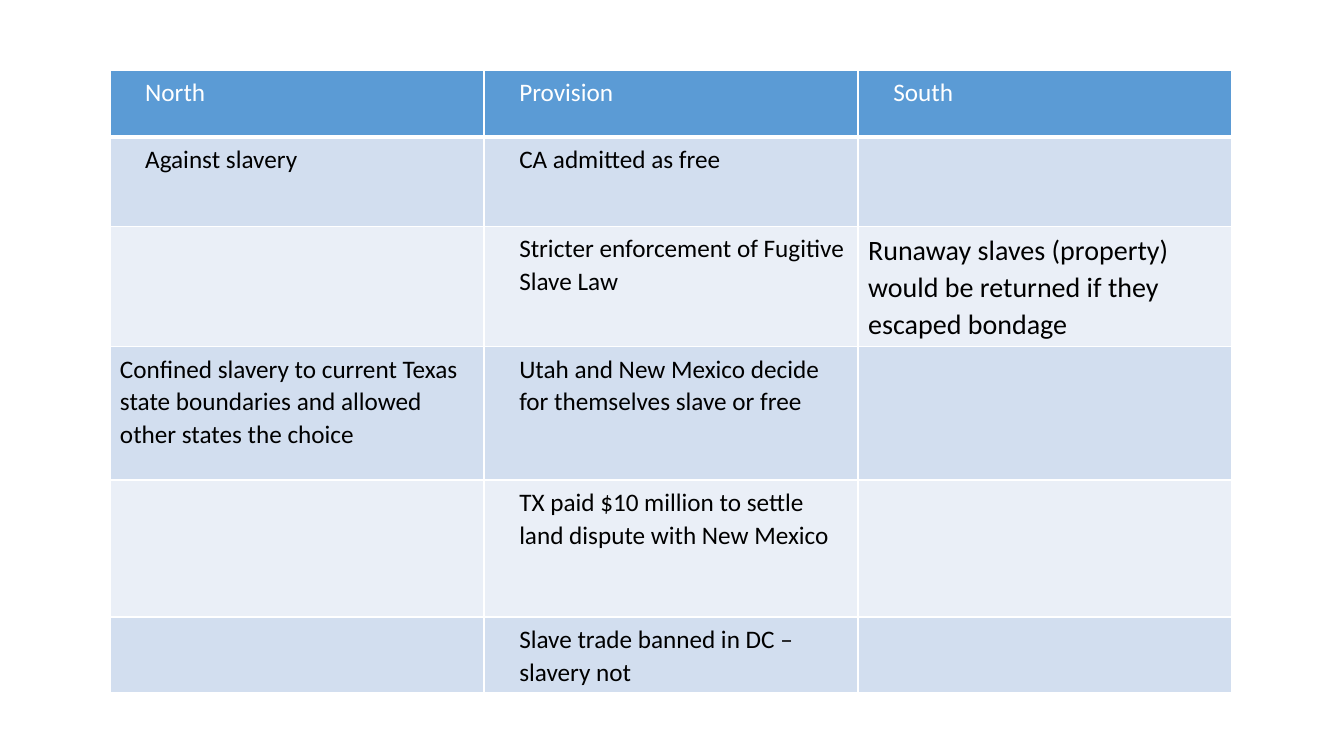
from lxml.etree import SubElement
from pptx import Presentation
from pptx.dml.color import RGBColor
from pptx.oxml.ns import qn
from pptx.util import Inches, Pt

HEADER_FILL, ODD_FILL, EVEN_FILL = "5B9BD5", "D2DEEF", "EAEFF7"
WHITE, BLACK = "FFFFFF", "000000"
COL_WIDTH = 3.71
ROW_HEIGHTS = [0.66, 0.89, 1.17, 1.32, 1.36, 0.7]
ROWS = [
    ("North", "Provision", "South"),
    ("Against slavery", "CA admitted as free", ""),
    ("", "Stricter enforcement of Fugitive Slave Law",
     "Runaway slaves (property) would be returned if they escaped bondage"),
    ("Confined slavery to current Texas state boundaries and allowed "
     "other states the choice",
     "Utah and New Mexico decide for themselves slave or free", ""),
    ("", "TX paid $10 million to settle land dispute with New Mexico", ""),
    ("", "Slave trade banned in DC – slavery not", ""),
]
# Cells set flush left, with their text size
FLUSH_SIZES = {(2, 2): 20, (3, 0): 18}


def rgb(color):
    return RGBColor.from_string(color)


def add_borders(cell, bottom):
    """Draw white cell borders, 1 pt except for the given bottom width."""
    tcPr = cell._tc.get_or_add_tcPr()
    for side, width in (("L", 1), ("R", 1), ("T", 1), ("B", bottom)):
        ln = SubElement(tcPr, qn(f"a:ln{side}"), w=str(Pt(width)))
        fill = SubElement(ln, qn("a:solidFill"))
        SubElement(fill, qn("a:srgbClr"), val=WHITE)


def write_cell(cell, text, size, color, indented):
    p = cell.text_frame.paragraphs[0]
    p.text = text
    p.font.size = Pt(size)
    p.line_spacing = 1.07
    if indented:
        p.space_after = Pt(8)
        pPr = p._p.get_or_add_pPr()
        pPr.set("marL", str(Inches(0.25)))
        pPr.set("indent", "0")
    for r in p.runs:
        r.font.name = "Calibri"
        r.font.size = Pt(size)
        r.font.bold = False
        r.font.color.rgb = rgb(color)


def add_compromise_table(s, left, top):
    shape = s.shapes.add_table(
        len(ROWS), len(ROWS[0]), Inches(left), Inches(top),
        Inches(COL_WIDTH * len(ROWS[0])), Inches(sum(ROW_HEIGHTS)))
    table = shape.table
    for col in table.columns:
        col.width = Inches(COL_WIDTH)
    for i, (texts, height) in enumerate(zip(ROWS, ROW_HEIGHTS)):
        table.rows[i].height = Inches(height)
        header = i == 0
        fill = HEADER_FILL if header else ODD_FILL if i % 2 else EVEN_FILL
        for j, text in enumerate(texts):
            cell = table.cell(i, j)
            add_borders(cell, 3 if header else 1)
            cell.fill.solid()
            cell.fill.fore_color.rgb = rgb(fill)
            write_cell(cell, text, FLUSH_SIZES.get((i, j), 18),
                       WHITE if header else BLACK,
                       bool(text) and (i, j) not in FLUSH_SIZES)


def main():
    prs = Presentation()
    prs.slide_width, prs.slide_height = Inches(13.33), Inches(7.5)
    s = prs.slides.add_slide(prs.slide_layouts[6])
    add_compromise_table(s, 1.09, 0.7)
    prs.save("out.pptx")


if __name__ == "__main__":
    main()
